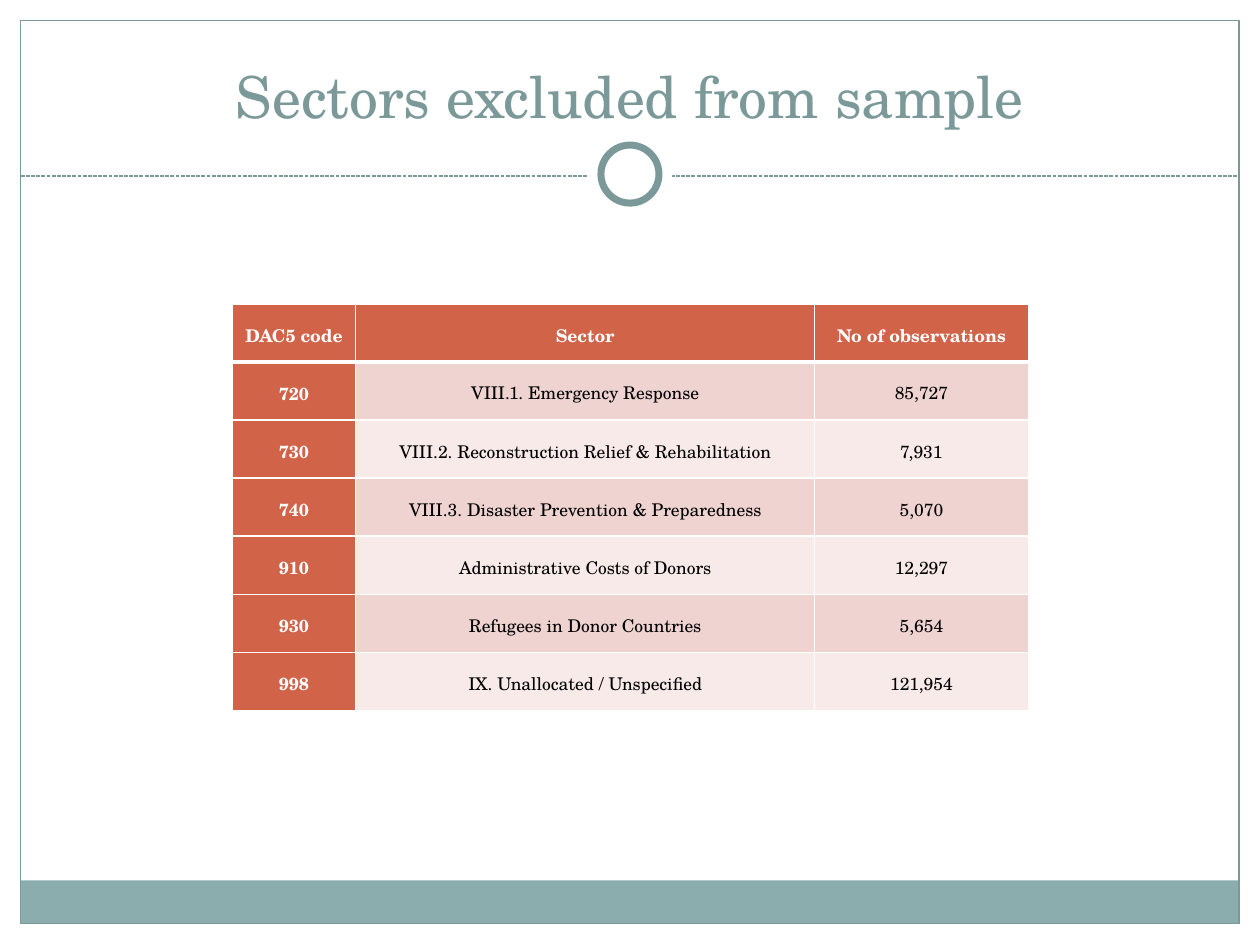
"""Build the slide that lists the sectors excluded from the sample."""

from dataclasses import dataclass

from lxml.etree import SubElement
from pptx import Presentation
from pptx.dml.color import RGBColor
from pptx.enum.dml import MSO_LINE
from pptx.enum.shapes import MSO_CONNECTOR, MSO_SHAPE
from pptx.enum.text import MSO_ANCHOR, MSO_AUTO_SIZE, PP_ALIGN
from pptx.oxml import parse_xml
from pptx.oxml.ns import nsdecls, qn
from pptx.util import Cm, Pt

HEADER = ("DAC5 code", "Sector", "No of observations")
SECTORS = (
    ("720", "VIII.1. Emergency Response", "85,727"),
    ("730", "VIII.2. Reconstruction Relief & Rehabilitation", "7,931"),
    ("740", "VIII.3. Disaster Prevention & Preparedness", "5,070"),
    ("910", "Administrative Costs of Donors", "12,297"),
    ("930", "Refugees in Donor Countries", "5,654"),
    ("998", "IX. Unallocated / Unspecified", "121,954"),
)


@dataclass(frozen=True)
class Theme:
    """Colours, font and type sizes of the slide."""

    font: str = "TeX Gyre Schola"
    title_size: float = 33
    table_size: float = 10
    white: str = "FFFFFF"
    black: str = "000000"
    frame: str = "7C999A"
    band: str = "8CADAE"
    accent: str = "D16349"
    stripes: tuple = ("F7EAE9", "EED3D0")


def assign(target, **values):
    """Set each named attribute on the target."""
    for name, value in values.items():
        setattr(target, name, value)


class SlideBuilder:
    """Holds the theme and the current slide, and draws its elements."""

    def __init__(self, slide, theme):
        """Keep the slide and the theme."""
        self.slide = slide
        self.theme = theme

    def set_text(self, frame, text, size, color, bold=False, **paragraph_format):
        """Put one centred, styled paragraph into a text frame."""
        frame.text = text
        paragraph = frame.paragraphs[0]
        assign(paragraph, alignment=PP_ALIGN.CENTER, **paragraph_format)
        font = paragraph.runs[0].font
        assign(font, name=self.theme.font, size=Pt(size), bold=bold)
        font.color.rgb = RGBColor.from_string(color)

    def title(self, text, left, top, width, height):
        """Move, fill and format the title placeholder."""
        shape = self.slide.shapes.title
        assign(shape, left=Cm(left), top=Cm(top), width=Cm(width), height=Cm(height))
        frame = shape.text_frame
        self.set_text(frame, text, self.theme.title_size, self.theme.frame)
        assign(frame, vertical_anchor=MSO_ANCHOR.BOTTOM, word_wrap=True,
               auto_size=MSO_AUTO_SIZE.NONE)

    def shape(self, kind, left, top, width, height, fill=None, line=None, weight=0.75):
        """Draw a preset shape with an optional fill and outline."""
        shape = self.slide.shapes.add_shape(kind, Cm(left), Cm(top), Cm(width), Cm(height))
        shape.shadow.inherit = False
        for style, color in ((shape.fill, fill), (shape.line.fill, line)):
            if color:
                style.solid()
                style.fore_color.rgb = RGBColor.from_string(color)
            else:
                style.background()
        if line:
            shape.line.width = Pt(weight)

    def circle(self, center_x, center_y, diameter, **style):
        """Draw a circle around a centre point."""
        radius = diameter / 2
        self.shape(MSO_SHAPE.OVAL, center_x - radius, center_y - radius,
                   diameter, diameter, **style)

    def dashed_rule(self, left, right, y):
        """Draw a horizontal dashed line."""
        connector = self.slide.shapes.add_connector(
            MSO_CONNECTOR.STRAIGHT, Cm(left), Cm(y), Cm(right), Cm(y))
        assign(connector.line, width=Pt(0.75), dash_style=MSO_LINE.SQUARE_DOT)
        connector.line.color.rgb = RGBColor.from_string(self.theme.frame)
        SubElement(connector._element.spPr, qn("a:effectLst"))

    def borders(self, cell, **weights):
        """Give the sides of a cell white lines of the given weights."""
        properties = cell._tc.get_or_add_tcPr()
        for index, (side, weight) in enumerate(weights.items()):
            properties.insert(index, parse_xml(
                f'<a:ln{side} {nsdecls("a")} w="{Pt(weight)}"><a:solidFill>'
                f'<a:srgbClr val="{self.theme.white}"/></a:solidFill></a:ln{side}>'))

    def cell(self, cell, text, row, column):
        """Fill and format one table cell by its place in the grid."""
        theme = self.theme
        heading = row == 0 or column == 0
        self.set_text(cell.text_frame, text, theme.table_size,
                      theme.white if heading else theme.black, heading, line_spacing=1.15)
        assign(cell, vertical_anchor=MSO_ANCHOR.MIDDLE, margin_left=Cm(0.19),
               margin_right=Cm(0.19), margin_top=0, margin_bottom=0)
        cell.fill.solid()
        color = theme.accent if heading else theme.stripes[row % 2]
        cell.fill.fore_color.rgb = RGBColor.from_string(color)
        self.borders(cell, L=1, R=1, T=3 if row == 1 else 1, B=3 if row == 0 else 1)

    def table(self, rows, left, top, widths, row_height):
        """Draw a table with a heading row and a heading column."""
        table = self.slide.shapes.add_table(
            len(rows), len(widths), Cm(left), Cm(top),
            Cm(sum(widths)), Cm(row_height * len(rows))).table
        for column, width in zip(table.columns, widths):
            column.width = Cm(width)
        for row_index, texts in enumerate(rows):
            table.rows[row_index].height = Cm(row_height)
            for column_index, text in enumerate(texts):
                self.cell(table.cell(row_index, column_index), text,
                          row_index, column_index)


def main():
    """Compose the slide and save it."""
    presentation = Presentation()
    assign(presentation, slide_width=Cm(25.4), slide_height=Cm(19.05))
    slide = presentation.slides.add_slide(presentation.slide_layouts[5])
    theme = Theme()
    builder = SlideBuilder(slide, theme)

    margin, center = 0.42, 12.7
    inner_width = 2 * (center - margin)
    builder.shape(MSO_SHAPE.RECTANGLE, margin, 17.75, inner_width, 0.87, fill=theme.band)
    builder.shape(MSO_SHAPE.RECTANGLE, margin, margin, inner_width, 18.2, line=theme.frame)
    builder.dashed_rule(margin, margin + inner_width, 3.55)
    builder.circle(center, 3.51, 1.7, fill=theme.white)
    builder.circle(center, 3.51, 1.17, fill=theme.white, line=theme.frame, weight=4)

    builder.title("Sectors excluded from sample", 0.85, 0.64, 23.7, 2.1)
    builder.table((HEADER, *SECTORS), 4.68, 6.13, (2.49, 9.25, 4.31), 1.17)
    presentation.save("out.pptx")


if __name__ == "__main__":
    main()
